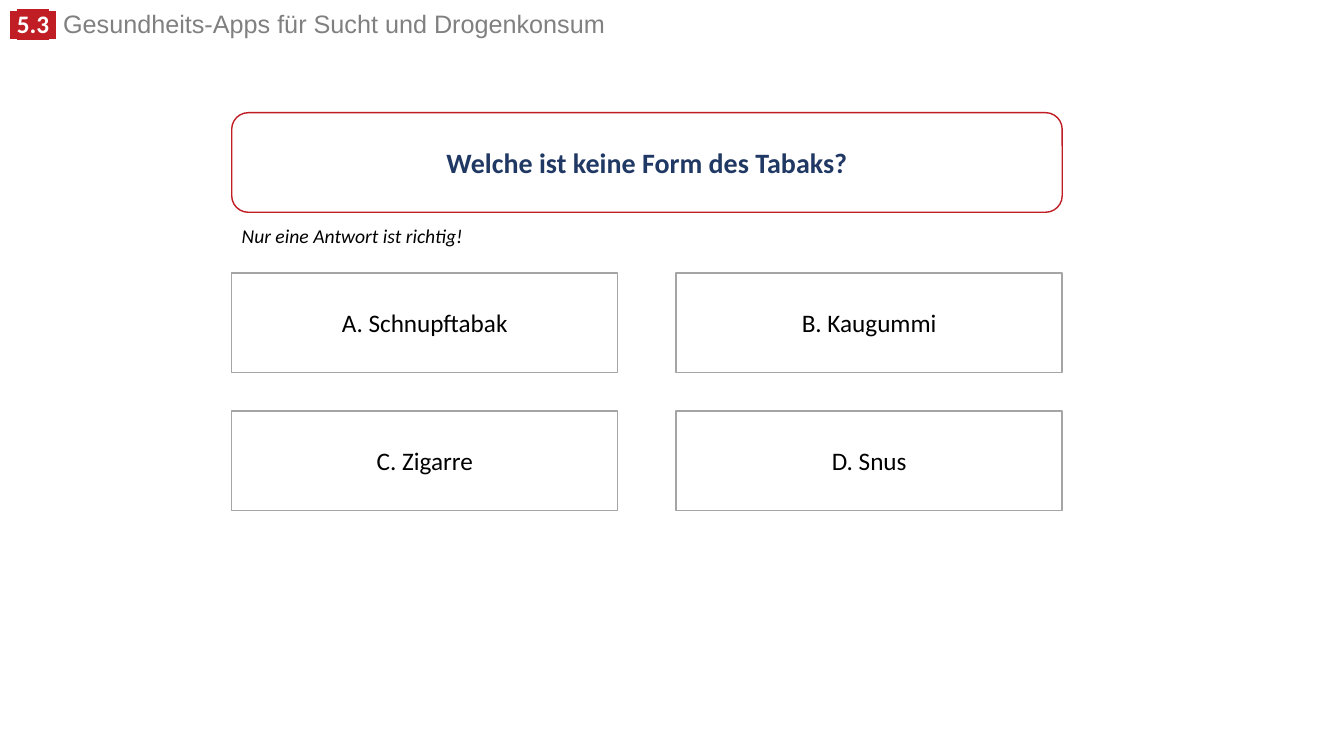
import pptx
import pptx.util
import pptx.dml.color
import pptx.enum.shapes
import pptx.enum.text
import pptx.oxml
import pptx.oxml.ns

Cm, Pt = pptx.util.Cm, pptx.util.Pt
SHAPE = pptx.enum.shapes.MSO_SHAPE
ALIGN = pptx.enum.text.PP_ALIGN
ANCHOR = pptx.enum.text.MSO_ANCHOR
FIT = pptx.enum.text.MSO_AUTO_SIZE

# Content
HEADING = [  # text, style
    (" ", "badge_space"),
    ("5.3", "badge"),
    (" ", "badge_space"),
    (" Gesundheits-Apps für Sucht und Drogenkonsum", "heading"),
]
QUESTION = "Welche ist keine Form des Tabaks?"
HINT = "Nur eine Antwort ist richtig!"
ANSWERS = ["A. Schnupftabak", "B. Kaugummi", "C. Zigarre", "D. Snus"]

# Theme
THEME = {
    "white": "FFFFFF",
    "red": "C01E24",
    "grey": "A5A5A5",
    "styles": {
        "badge_space": {"name": "Arial", "size": 18, "color": "FFFFFF", "bold": True},
        "badge": {"name": "Calibri", "size": 18, "color": "FFFFFF", "bold": True},
        "heading": {"name": "Arial", "size": 18, "color": "808080", "bold": False},
        "question": {"name": "Calibri", "size": 20, "color": "203864", "bold": True},
        "hint": {"name": "Calibri", "size": 14, "color": "000000", "italic": True},
        "answer": {"name": "Calibri", "size": 18, "color": "000000"},
    },
}

# Layout in centimetres
LEFT, WIDTH, BOX_HEIGHT = 5.84, 20.93, 2.51
QUESTION_TOP, HINT_TOP, ANSWERS_TOP = 2.84, 5.51, 6.88
ANSWER_WIDTH, ROW_STEP, COLUMNS = 9.73, 3.48, 2
COLUMN_STEP = WIDTH - ANSWER_WIDTH


def rgb(value):
    return pptx.dml.color.RGBColor.from_string(value)


def add_span(para, text, style):
    span = para.add_run()
    span.text = text
    for key, value in THEME["styles"][style].items():
        if key == "color":
            span.font.color.rgb = rgb(value)
        else:
            setattr(span.font, key, Pt(value) if key == "size" else value)
    return span


def highlight(span, color):
    mark = pptx.oxml.parse_xml(
        f'<a:highlight {pptx.oxml.ns.nsdecls("a")}><a:srgbClr val="{color}"/></a:highlight>'
    )
    span.font.fill  # the highlight follows the text fill
    span.font._element.find(pptx.oxml.ns.qn("a:solidFill")).addnext(mark)


def add_text(page, place, wrap):
    frame = page.shapes.add_textbox(*map(Cm, place)).text_frame
    frame.word_wrap = wrap
    frame.auto_size = FIT.SHAPE_TO_FIT_TEXT
    return frame.paragraphs[0]


def add_box(page, kind, place, line, text, style):
    box = page.shapes.add_shape(kind, *map(Cm, place))
    box.shadow.inherit = False
    box.fill.solid()
    box.fill.fore_color.rgb = rgb(THEME["white"])
    box.line.color.rgb = rgb(line)
    box.line.width = Pt(1)
    box.text_frame.word_wrap = True
    box.text_frame.vertical_anchor = ANCHOR.MIDDLE
    para = box.text_frame.paragraphs[0]
    para.alignment = ALIGN.CENTER
    add_span(para, text, style)


def main():
    deck = pptx.Presentation()
    deck.slide_width, deck.slide_height = Cm(33.87), Cm(19.05)
    page = deck.slides.add_slide(deck.slide_layouts[6])

    # Heading with highlighted section number
    para = add_text(page, (0, 0.23, 24.18, 0.89), True)
    para.line_spacing = 0.8
    for text, style in HEADING:
        span = add_span(para, text, style)
        if style.startswith("badge"):
            highlight(span, THEME["red"])

    # Question and hint
    add_box(page, SHAPE.ROUNDED_RECTANGLE, (LEFT, QUESTION_TOP, WIDTH, BOX_HEIGHT),
            THEME["red"], QUESTION, "question")
    add_span(add_text(page, (LEFT, HINT_TOP, 6.15, 0.86), False), HINT, "hint")

    # Answer grid
    for index, answer in enumerate(ANSWERS):
        row, column = divmod(index, COLUMNS)
        place = (LEFT + column * COLUMN_STEP, ANSWERS_TOP + row * ROW_STEP,
                 ANSWER_WIDTH, BOX_HEIGHT)
        add_box(page, SHAPE.RECTANGLE, place, THEME["grey"], answer, "answer")

    deck.save("out.pptx")


if __name__ == "__main__":
    main()
